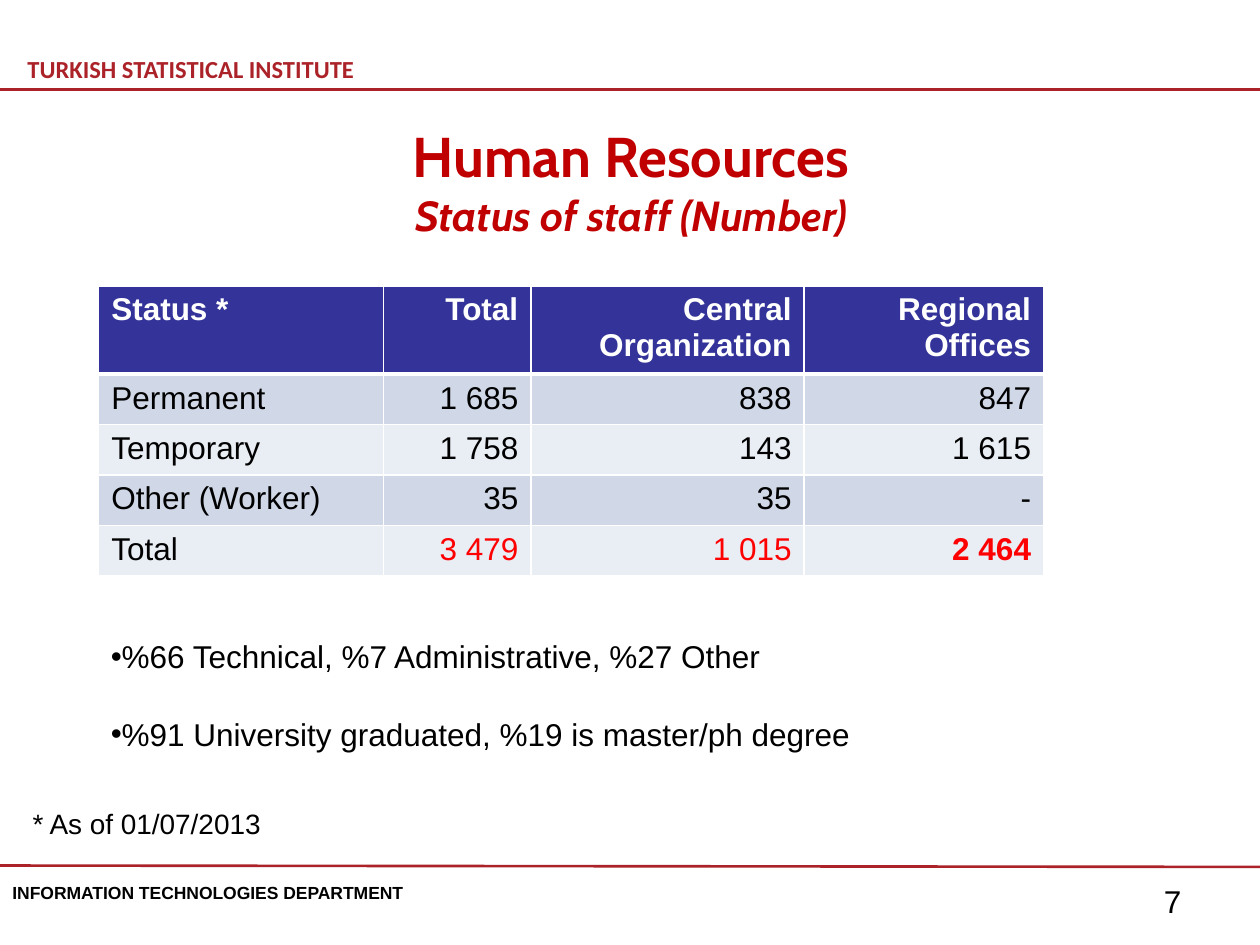
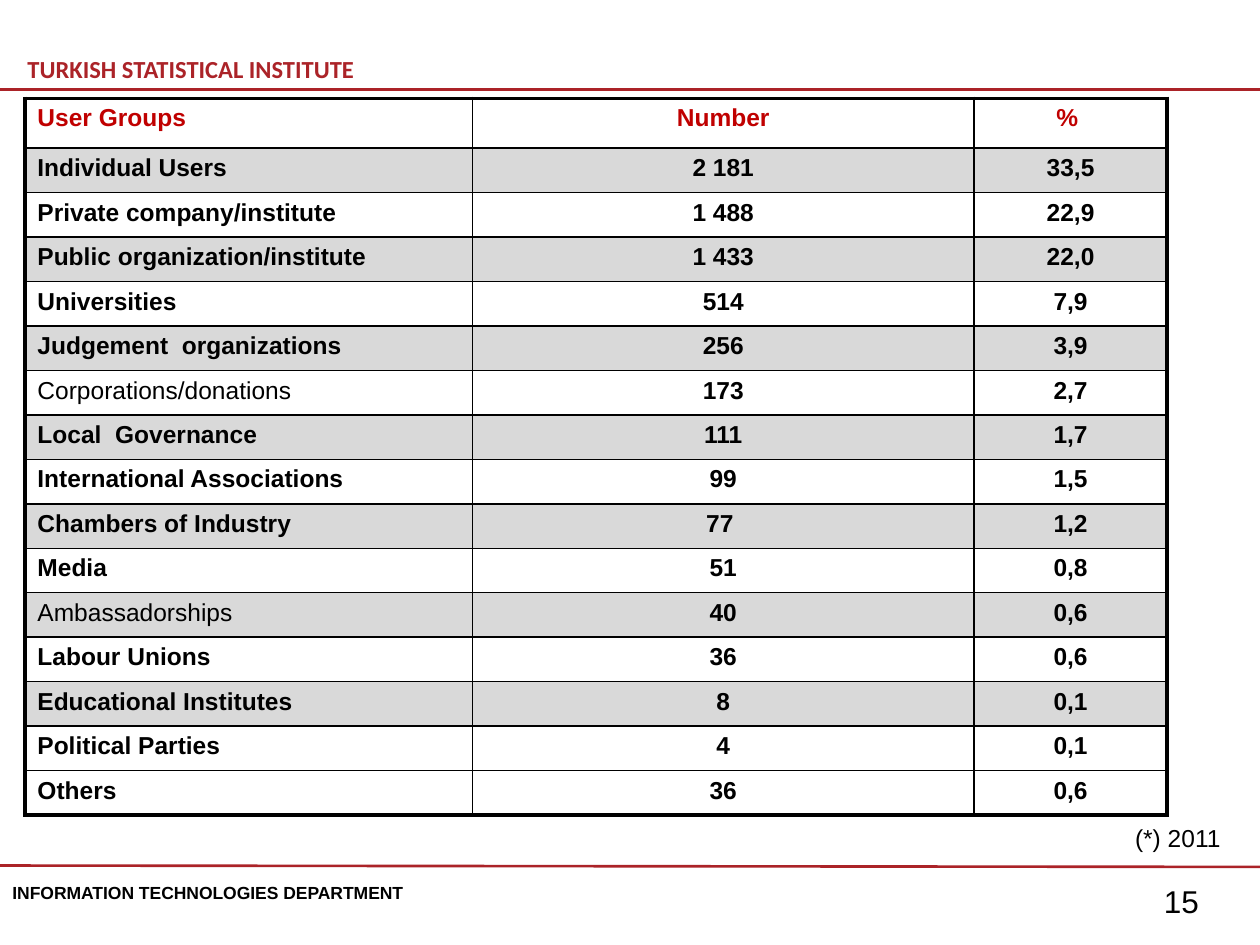
from lxml.etree import SubElement
from pptx import Presentation
from pptx.dml.color import RGBColor
from pptx.enum.shapes import MSO_CONNECTOR as Connector
from pptx.enum.text import MSO_ANCHOR as Anchor, MSO_AUTO_SIZE as AutoSize, PP_ALIGN as Align
from pptx.oxml.ns import qn
from pptx.util import Pt

BRICK = RGBColor(0xAB, 0x23, 0x28)
CRIMSON = RGBColor(0xC0, 0x00, 0x00)
RED = RGBColor(0xFF, 0x00, 0x00)
BLACK = RGBColor(0x00, 0x00, 0x00)
WHITE = RGBColor(0xFF, 0xFF, 0xFF)
INDIGO = RGBColor(0x33, 0x33, 0x99)
BLUE_BAND = RGBColor(0xD0, 0xD8, 0xE8)
PALE_BAND = RGBColor(0xE9, 0xED, 0xF4)
GREY_BAND = RGBColor(0xD9, 0xD9, 0xD9)

STAFF = [
    ("Status *", "Total", "Central Organization", "Regional Offices"),
    ("Permanent", "1 685", "838", "847"),
    ("Temporary", "1 758", "143", "1 615"),
    ("Other (Worker)", "35", "35", "-"),
    ("Total", "3 479", "1 015", "2 464"),
]
USERS = [
    ("User Groups", "Number", "% "),
    ("Individual Users", "2 181", "33,5"),
    ("Private company/institute", "1 488", "22,9"),
    ("Public organization/institute", "1 433", "22,0"),
    ("Universities", "514", "7,9"),
    ("Judgement  organizations", "256", "3,9"),
    ("Corporations/donations", "173", "2,7"),
    ("Local  Governance", "111", "1,7"),
    ("International Associations", "99", "1,5"),
    ("Chambers of Industry", "77 ", "1,2"),
    ("Media", "51", "0,8"),
    ("Ambassadorships", "40", "0,6"),
    ("Labour Unions", "36", "0,6"),
    ("Educational Institutes", "8", "0,1"),
    ("Political Parties", "4", "0,1"),
    ("Others", "36", "0,6"),
]
LIGHT_USERS = ("Corporations/donations", "Ambassadorships")


class Composer:
    def __init__(self):
        self.deck = Presentation()
        self.deck.slide_width, self.deck.slide_height = Pt(720), Pt(540)
        self.page = None

    def new_page(self, number):
        self.page = self.deck.slides.add_slide(self.deck.slide_layouts[6])
        header = self.text(8.6, 25.2, 255, 28, ["TURKISH STATISTICAL INSTITUTE"],
                           14, BRICK, bold=True, name="Calibri", grow=False)
        header.vertical_anchor = Anchor.MIDDLE
        self.rule(51.1, 51.1)
        self.rule(494.6, 495.4)
        self.text(0, 500.4, 242, 19.4, ["INFORMATION TECHNOLOGIES DEPARTMENT"],
                  10, bold=True, wrap=False)
        self.text(658, 500.4, 50.4, 29, [number], 18)

    def rule(self, start, end):
        line = self.page.shapes.add_connector(Connector.STRAIGHT, 0, Pt(start), Pt(720), Pt(end))
        line.line.color.rgb = BRICK
        line.line.width = Pt(1.5)
        SubElement(line._element.spPr, qn("a:effectLst"))

    def style(self, para, size, color=BLACK, bold=False, name="Arial", align=Align.LEFT):
        para.alignment = align
        font = para.font
        font.size, font.name, font.bold = Pt(size), name, bold
        font.color.rgb = color

    def text(self, left, top, width, height, lines, size, color=BLACK, bold=False,
             name="Arial", align=Align.LEFT, wrap=True, grow=True, bullet=None, gap=0):
        box = self.page.shapes.add_textbox(Pt(left), Pt(top), Pt(width), Pt(height))
        frame = box.text_frame
        frame.word_wrap = wrap
        frame.auto_size = AutoSize.SHAPE_TO_FIT_TEXT if grow else AutoSize.NONE
        for index, line in enumerate(lines):
            para = frame.add_paragraph() if index else frame.paragraphs[0]
            para.text = line
            if index and gap:
                para.space_before = Pt(gap)
            if bullet:
                props = para._p.get_or_add_pPr()
                props.set("marL", "0")
                props.set("indent", "0")
                SubElement(props, qn("a:buFont")).set("typeface", "Arial")
                SubElement(props, qn("a:buChar")).set("char", bullet)
            self.style(para, size, color, bold, name, align)
        return frame

    def border(self, cell, color, widths):
        props = cell._tc.get_or_add_tcPr()
        for side, width in zip("LRTB", widths):
            edge = SubElement(props, qn(f"a:ln{side}"), w=str(Pt(width)))
            fill = SubElement(edge, qn("a:solidFill"))
            SubElement(fill, qn("a:srgbClr"), val=str(color))

    def table(self, left, top, columns, head_height, row_height, rows, size, align,
              bands, ink, edge, outer, under_head):
        heights = [head_height] + [row_height] * (len(rows) - 1)
        table = self.page.shapes.add_table(len(rows), len(columns), Pt(left), Pt(top),
                                           Pt(sum(columns)), Pt(sum(heights))).table
        table.first_row = table.horz_banding = False
        for column, width in zip(table.columns, columns):
            column.width = Pt(width)
        last_row, last_column = len(rows) - 1, len(columns) - 1
        for r, values in enumerate(rows):
            table.rows[r].height = Pt(heights[r])
            for c, value in enumerate(values):
                cell = table.cell(r, c)
                above = {0: outer, 1: under_head}.get(r, 1)
                below = {0: under_head, last_row: outer}.get(r, 1)
                self.border(cell, edge, (1 if c else outer, outer if c == last_column else 1,
                                         above, below))
                cell.fill.solid()
                cell.fill.fore_color.rgb = bands(r)
                cell.text = value
                color, bold = ink(r, c)
                self.style(cell.text_frame.paragraphs[0], size, color, bold,
                           align=align if c else Align.LEFT)


def staff_band(row):
    if row == 0:
        return INDIGO
    return BLUE_BAND if row % 2 else PALE_BAND


def staff_ink(row, column):
    if row == 0:
        return WHITE, True
    is_sum = row == len(STAFF) - 1 and column > 0
    return (RED if is_sum else BLACK), is_sum and column == 3


def user_band(row):
    return GREY_BAND if row % 2 and row < len(USERS) - 1 else WHITE


def user_ink(row, column):
    return (BLACK if row else CRIMSON), USERS[row][column] not in LIGHT_USERS


def human_resources(composer):
    composer.new_page("7")
    title = composer.text(87.8, 66.2, 545.8, 75, ["Human Resources", "Status of staff (Number)"],
                          32, CRIMSON, bold=True, name="Cabin", align=Align.CENTER)
    subtitle = title.paragraphs[1].font
    subtitle.size, subtitle.italic = Pt(24), True
    composer.table(56.4, 163.4, (162.7, 84.3, 156.2, 136.8), 50, 28.8, STAFF, 18, Align.RIGHT,
                   staff_band, staff_ink, WHITE, outer=1, under_head=3)
    composer.text(11.5, 457.2, 320.4, 26.6, ["* As of 01/07/2013"], 16)
    composer.text(56.2, 360.7, 440.6, 72.7,
                  ["%66 Technical, %7 Administrative, %27 Other",
                   "%91 University graduated, %19 is master/ph degree"],
                  18, wrap=False, bullet="•", gap=22.5)


def user_groups(composer):
    composer.new_page("15")
    composer.table(14.2, 56.2, (255.8, 286.6, 110.4), 28.5, 25.4, USERS, 14, Align.CENTER,
                   user_band, user_ink, BLACK, outer=2.25, under_head=1)
    composer.text(641.5, 466.6, 63.4, 24.5, ["(*) 2011"], 14, wrap=False)


def main():
    composer = Composer()
    human_resources(composer)
    user_groups(composer)
    composer.deck.save("out.pptx")


if __name__ == "__main__":
    main()
